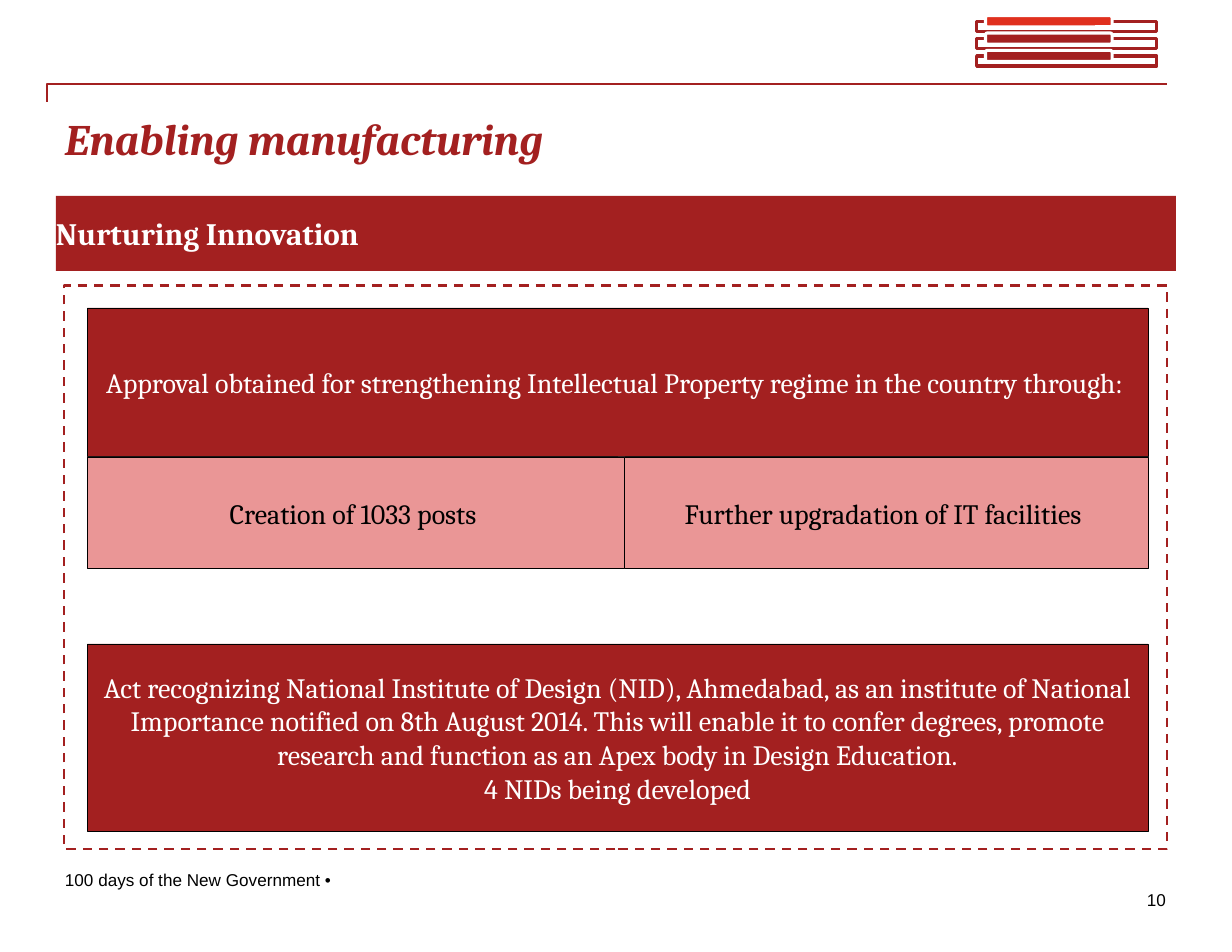
from dataclasses import dataclass

from pptx import Presentation
from pptx.dml.color import RGBColor
from pptx.enum.dml import MSO_LINE_DASH_STYLE as Dash
from pptx.enum.shapes import MSO_SHAPE as Shape
from pptx.enum.text import MSO_ANCHOR as Anchor, PP_ALIGN as Align
from pptx.util import Inches, Pt


@dataclass(frozen=True)
class Theme:
    red: str = "A32020"
    bright: str = "E0301E"
    pink: str = "EA9696"
    white: str = "FFFFFF"
    black: str = "000000"
    serif: str = "Cambria"
    sans: str = "Arial"
    title: int = 28
    banner: int = 20
    body: int = 18
    footer: int = 11


THEME = Theme()


def set_values(target, values):
    for name, value in values.items():
        setattr(target, name, value)


def write_text(shape, paragraphs, color, size, font=THEME.serif, align=Align.CENTER,
               anchor=Anchor.MIDDLE, inset=None, space=0, **style):
    frame = shape.text_frame
    set_values(frame, {"word_wrap": True, "vertical_anchor": anchor})
    if inset is not None:
        sides = ("left", "right", "top", "bottom")
        set_values(frame, {f"margin_{side}": Inches(inset) for side in sides})
    frame.text = "\n".join(paragraphs)
    for paragraph in frame.paragraphs:
        set_values(paragraph, {"alignment": align, "space_before": Pt(0), "space_after": Pt(space)})
        for run in paragraph.runs:
            set_values(run.font, {"name": font, "size": Pt(size), **style})
            run.font.color.rgb = RGBColor.from_string(color)


def add_box(shapes, box, fill=None, line=None, width=0.5, kind=Shape.RECTANGLE):
    shape = shapes.add_shape(kind, *map(Inches, box))
    shape.shadow.inherit = False
    if fill:
        shape.fill.solid()
        shape.fill.fore_color.rgb = RGBColor.from_string(fill)
    else:
        shape.fill.background()
    if line:
        shape.line.color.rgb = RGBColor.from_string(line)
        shape.line.width = Pt(width)
    else:
        shape.line.fill.background()
    return shape


def add_header_rule(slide, box):
    left, top, width, height = box
    builder = slide.shapes.build_freeform(Inches(left), Inches(top + height))
    corners = [(left, top), (left + width, top)]
    builder.add_line_segments([(Inches(x), Inches(y)) for x, y in corners], close=False)
    rule = builder.convert_to_shape()
    rule.shadow.inherit = False
    rule.fill.background()
    rule.line.color.rgb = RGBColor.from_string(THEME.red)
    rule.line.width = Pt(1)


def add_title(slide, box):
    title = slide.shapes.title
    set_values(title, dict(zip(("left", "top", "width", "height"), map(Inches, box))))
    write_text(title, ["Enabling manufacturing"], THEME.red, THEME.title, align=Align.JUSTIFY,
               anchor=Anchor.TOP, inset=0, bold=True, italic=True)


def add_banner(slide, box):
    banner = add_box(slide.shapes, box, THEME.red)
    write_text(banner, ["Nurturing Innovation"], THEME.white, THEME.banner,
               align=Align.LEFT, inset=0, bold=True)


def add_panel(slide, box):
    left, top, width, _ = box
    inner_left, inner_width = left + 0.21, width - 0.38
    split = 4.74
    cells = [
        (0, 0.2, inner_width, 1.33, THEME.red, THEME.white,
         ["Approval obtained for strengthening Intellectual Property regime in the country through: "]),
        (split, 1.53, inner_width - split, 1, THEME.pink, THEME.black,
         ["Further upgradation of IT facilities"]),
        (0, 1.53, split + 0.06, 1, THEME.pink, THEME.black, ["Creation of 1033 posts "]),
        (0, 3.2, inner_width, 1.67, THEME.red, THEME.white,
         ["Act recognizing National Institute of Design (NID), Ahmedabad, as an institute of "
          "National Importance notified on 8th August 2014. This will enable it to confer degrees, "
          "promote research and function as an Apex body in Design Education.",
          "4 NIDs being developed"]),
    ]
    for x, y, cell_width, height, fill, color, paragraphs in cells:
        cell_box = (inner_left + x, top + y, cell_width, height)
        cell = add_box(slide.shapes, cell_box, fill, THEME.black)
        write_text(cell, paragraphs, color, THEME.body)
    frame = add_box(slide.shapes, box, line=THEME.red, width=1.5)
    frame.line.dash_style = Dash.DASH


def add_footer(slide, box):
    left, top, width, _ = box
    number_width = 0.3
    entries = [
        ((left, top, 2.6, 0.18), "100 days of the New Government •", Align.LEFT),
        ((left + width - number_width, top + 0.18, number_width, 0.19), "10", Align.RIGHT),
    ]
    for entry_box, text, align in entries:
        entry = slide.shapes.add_textbox(*map(Inches, entry_box))
        write_text(entry, [text], THEME.black, THEME.footer, THEME.sans, align,
                   Anchor.TOP, inset=0, space=10)


def add_progress_bars(slide, box):
    left, top, width, height = box
    group = slide.shapes.add_group_shape()
    pitch = (height - 0.14) / 2
    for index, color in enumerate((THEME.bright, THEME.red, THEME.red)):
        y = top + index * pitch
        add_box(group.shapes, (left, y + 0.05, width, 0.09), THEME.white, THEME.red, 2)
        add_box(group.shapes, (left + 0.08, y, 1.13, 0.1), color, THEME.white, 2,
                Shape.ROUNDED_RECTANGLE)


def main():
    presentation = Presentation()
    set_values(presentation, {"slide_width": Inches(11), "slide_height": Inches(8.5)})
    slide = presentation.slides.add_slide(presentation.slide_layouts[5])
    add_header_rule(slide, (0.42, 0.75, 10, 0.16))
    add_title(slide, (0.58, 1, 9.84, 1))
    add_banner(slide, (0.5, 1.75, 10, 0.67))
    add_panel(slide, (0.57, 2.55, 9.85, 5.03))
    add_footer(slide, (0.58, 7.76, 9.83, 0.37))
    add_progress_bars(slide, (8.72, 0.14, 1.61, 0.45))
    presentation.save("out.pptx")


if __name__ == "__main__":
    main()
